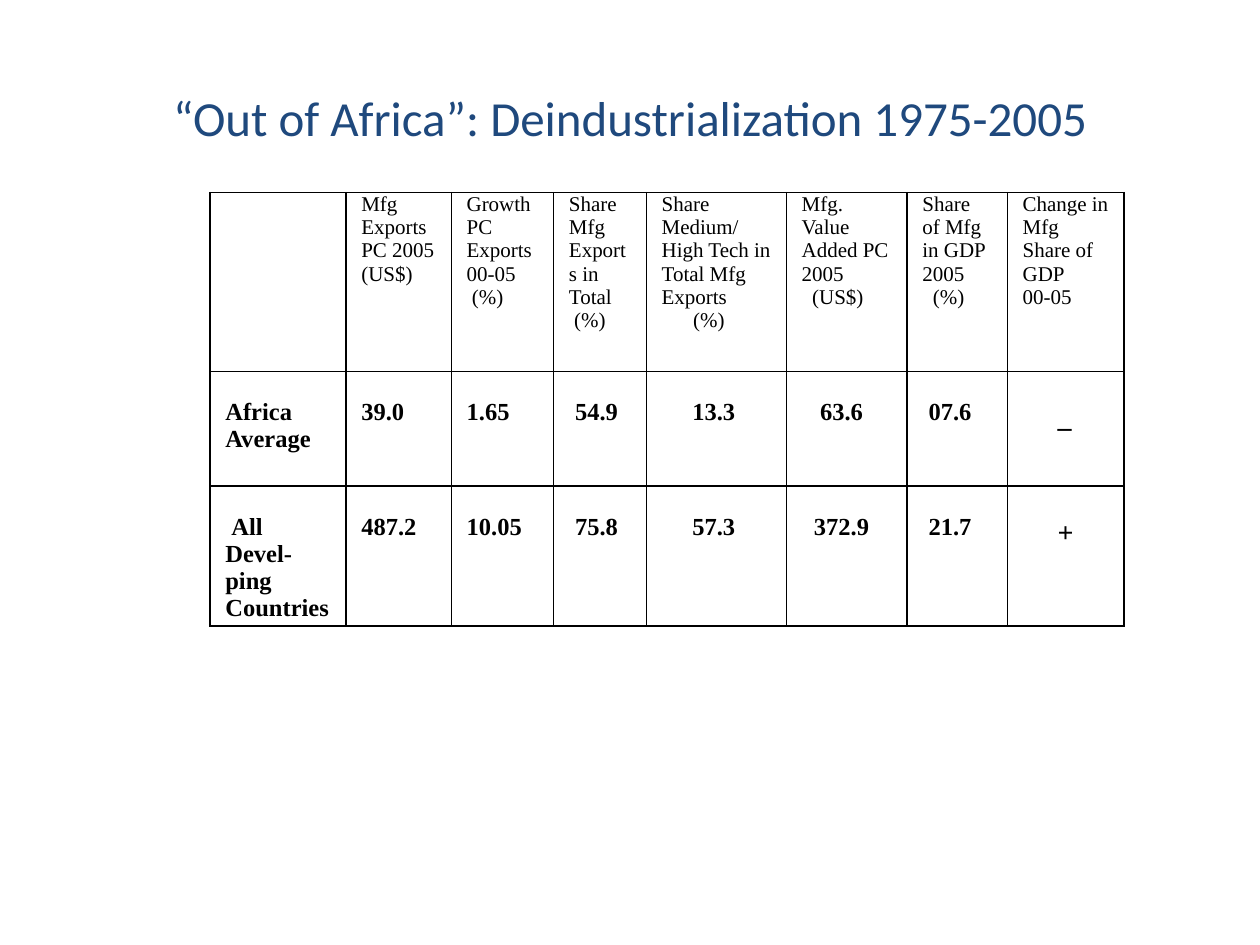
import lxml.etree
import pptx
import pptx.dml.color
import pptx.enum.text
import pptx.oxml.ns
import pptx.util

Pt = pptx.util.Pt
qn = pptx.oxml.ns.qn

NAVY = pptx.dml.color.RGBColor(0x1F, 0x49, 0x7D)
BLACK = pptx.dml.color.RGBColor(0, 0, 0)

COLUMN_WIDTHS = [77.7, 60.2, 58.5, 53, 80, 69, 57.3, 66.8]
ROW_HEIGHTS = [102.2, 65.6, 80]

# Each cell is a list of (text, first-line indent in points) paragraphs.
HEADERS = [
    [],
    [("Mfg Exports PC 2005", 0), ("(US$)", 0)],
    [("Growth PC Exports 00-05", 0), ("(%)", 3)],
    [("Share Mfg Exports in Total", 0), ("(%)", 3)],
    [("Share Medium/", 0), ("High Tech in Total Mfg Exports", 0), ("(%)", 18)],
    [("Mfg. Value Added PC 2005", 0), ("(US$)", 6)],
    [("Share of Mfg in GDP 2005", 0), ("(%)", 6)],
    [("Change in Mfg Share of GDP", 0), ("00-05", 0)],
]
AFRICA = [
    [("Africa Average", 0)], [("39.0", 0)], [("1.65", 0)], [("54.9", 3.5)],
    [("13.3", 17.5)], [("63.6", 10.5)], [("07.6", 3.5)], [("_", 20)],
]
DEVELOPING = [
    [("All Devel-", 3.5), ("ping Countries", 0)], [("487.2", 0)],
    [("10.05", 0)], [("75.8", 3.5)], [("57.3", 17.5)], [("372.9", 7)],
    [("21.7", 3.5)], [("+", 20)],
]


def add_title(slide, left, top, width, height):
    title = slide.shapes.title
    title.left, title.top = Pt(left), Pt(top)
    title.width, title.height = Pt(width), Pt(height)
    title.text_frame.text = "“Out of Africa”: Deindustrialization 1975-2005"
    title.text_frame.vertical_anchor = pptx.enum.text.MSO_ANCHOR.MIDDLE
    paragraph = title.text_frame.paragraphs[0]
    paragraph.alignment = pptx.enum.text.PP_ALIGN.CENTER
    paragraph.font.name = "Calibri"
    paragraph.font.size = Pt(28)
    paragraph.font.color.rgb = NAVY


def set_borders(cell):
    properties = cell._tc.get_or_add_tcPr()
    for side in ("a:lnL", "a:lnR", "a:lnT", "a:lnB"):
        line = lxml.etree.SubElement(properties, qn(side), w=str(Pt(1)))
        fill = lxml.etree.SubElement(line, qn("a:solidFill"))
        lxml.etree.SubElement(fill, qn("a:srgbClr"), val=str(BLACK))


def fill_cell(cell, paragraphs, size, bold, margin_top):
    set_borders(cell)
    cell.fill.background()
    cell.margin_left = cell.margin_right = Pt(8.8)
    cell.margin_top, cell.margin_bottom = Pt(margin_top), 0
    cell.text = "\n".join(text for text, _ in paragraphs)
    for paragraph, (_, indent) in zip(cell.text_frame.paragraphs, paragraphs):
        paragraph.font.name = "Times New Roman"
        paragraph.font.size = Pt(size)
        paragraph.font.bold = bold
        paragraph.font.color.rgb = BLACK
        if indent:
            paragraph._p.get_or_add_pPr().set("indent", str(Pt(indent)))


def add_indicator_table(slide, left, top):
    table = slide.shapes.add_table(
        len(ROW_HEIGHTS), len(COLUMN_WIDTHS), Pt(left), Pt(top),
        Pt(sum(COLUMN_WIDTHS)), Pt(sum(ROW_HEIGHTS))).table
    table.first_row = table.horz_banding = False
    for column, width in zip(table.columns, COLUMN_WIDTHS):
        column.width = Pt(width)
    for row, height in zip(table.rows, ROW_HEIGHTS):
        row.height = Pt(height)

    for column, header in enumerate(HEADERS):
        fill_cell(table.cell(0, column), header, 12, False, 0)
    sign_column = len(COLUMN_WIDTHS) - 1
    for row, values in enumerate((AFRICA, DEVELOPING), start=1):
        for column, value in enumerate(values):
            size, margin_top = (16, 18) if column == sign_column else (14, 15.7)
            fill_cell(table.cell(row, column), value, size, True, margin_top)


def main():
    presentation = pptx.Presentation()
    presentation.slide_width, presentation.slide_height = Pt(720), Pt(540)
    slide = presentation.slides.add_slide(presentation.slide_layouts[5])
    add_title(slide, 36, 21.6, 648, 90)
    add_indicator_table(slide, 120, 110)
    presentation.save("out.pptx")


if __name__ == "__main__":
    main()
